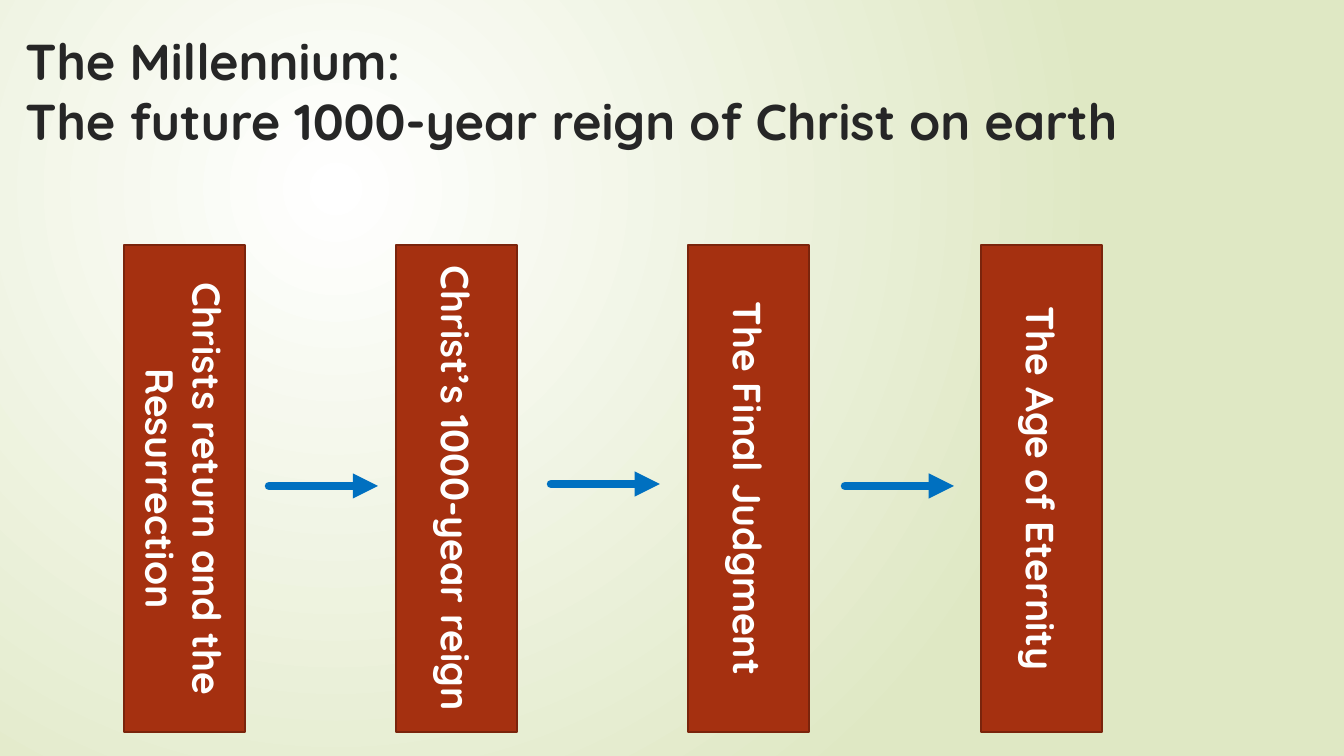
"""Build the slide showing the four stages of the Millennium in order."""
from lxml import etree
from pptx import Presentation
from pptx.dml.color import RGBColor
from pptx.enum.shapes import MSO_CONNECTOR, MSO_SHAPE
from pptx.enum.text import MSO_ANCHOR, MSO_AUTO_SIZE, PP_ALIGN
from pptx.oxml.ns import qn
from pptx.util import Emu, Pt

TITLE_LINES = ["The Millennium: ", "The future 1000-year reign of Christ on earth"]
STAGES = [
    (124, "Christs return and the Resurrection"),
    (396, "Christ’s 1000-year reign"),
    (688, "The Final Judgment"),
    (981, "The Age of Eternity"),
]
ARROWS = [(269, 486), (551, 484), (845, 486)]

SLIDE_WIDTH, SLIDE_HEIGHT = 1344, 756
TITLE_BOX = (15, 25, 1253, 141)
STAGE_TOP, STAGE_WIDTH, STAGE_HEIGHT = 245, 121, 487
ARROW_LENGTH = 109

FONT = "Quicksand"
WHITE = RGBColor(0xFF, 0xFF, 0xFF)
PALE_GREEN = RGBColor(0xDF, 0xE8, 0xC4)
CHARCOAL = RGBColor(0x26, 0x26, 0x26)
RUST = RGBColor(0xA5, 0x30, 0x10)
DARK_RUST = RGBColor(0x7A, 0x24, 0x0C)
BLUE = RGBColor(0x00, 0x70, 0xC0)

TITLE_ONLY = 5
RECTANGLE = MSO_SHAPE.RECTANGLE
STRAIGHT = MSO_CONNECTOR.STRAIGHT
TOP, MIDDLE = MSO_ANCHOR.TOP, MSO_ANCHOR.MIDDLE
LEFT, CENTER = PP_ALIGN.LEFT, PP_ALIGN.CENTER
NO_AUTOFIT = MSO_AUTO_SIZE.NONE


def px(length):
    """Turn pixels into EMU."""
    return Emu(round(length * 914400 / 100.8))


def write_lines(frame, lines, size, color, align, anchor):
    """Write bold lines into one paragraph, with line breaks between them."""
    frame.word_wrap = True
    frame.auto_size = NO_AUTOFIT
    frame.vertical_anchor = anchor
    para = frame.paragraphs[0]
    para.alignment = align
    for index, line in enumerate(lines):
        if index:
            para.add_line_break()
        span = para.add_run()
        span.text = line
        span.font.name = FONT
        span.font.size = Pt(size)
        span.font.bold = True
        span.font.color.rgb = color


def paint_background(page):
    """Fill the page with a circular gradient."""
    fill = page.background.fill
    fill.gradient()
    for stop, color in zip(fill.gradient_stops, (WHITE, PALE_GREEN)):
        stop.color.rgb = color
    gradient = page.element.find(".//" + qn("a:gradFill"))
    linear = gradient.find(qn("a:lin"))
    circle = etree.Element(qn("a:path"), {"path": "circle"})
    etree.SubElement(circle, qn("a:fillToRect"),
                     {"l": "50000", "t": "50000", "r": "100000", "b": "100000"})
    gradient.replace(linear, circle)


def add_stage(page, left, label):
    """Add a tall box with its label turned downwards."""
    box = page.shapes.add_shape(RECTANGLE, px(left), px(STAGE_TOP),
                                px(STAGE_WIDTH), px(STAGE_HEIGHT))
    box.shadow.inherit = False
    box.fill.solid()
    box.fill.fore_color.rgb = RUST
    box.line.color.rgb = DARK_RUST
    box.line.width = Pt(1.25)
    write_lines(box.text_frame, [label], 28, WHITE, CENTER, MIDDLE)
    box.element.find(".//" + qn("a:bodyPr")).set("vert", "vert")


def add_arrow(page, left, middle):
    """Add a thick arrow pointing right."""
    arrow = page.shapes.add_connector(STRAIGHT, px(left), px(middle),
                                      px(left + ARROW_LENGTH), px(middle))
    arrow.line.color.rgb = BLUE
    arrow.line.width = Pt(6)
    outline = arrow.line._get_or_add_ln()
    outline.set("cap", "rnd")
    etree.SubElement(outline, qn("a:tailEnd"), {"type": "triangle"})
    etree.SubElement(arrow.element.spPr, qn("a:effectLst"))


def main():
    """Build and save the deck."""
    deck = Presentation()
    deck.slide_width, deck.slide_height = px(SLIDE_WIDTH), px(SLIDE_HEIGHT)
    page = deck.slides.add_slide(deck.slide_layouts[TITLE_ONLY])
    paint_background(page)

    title = page.shapes.title
    title.left, title.top, title.width, title.height = map(px, TITLE_BOX)
    write_lines(title.text_frame, TITLE_LINES, 36, CHARCOAL, LEFT, TOP)

    for left, label in STAGES:
        add_stage(page, left, label)
    for left, middle in ARROWS:
        add_arrow(page, left, middle)
    deck.save("out.pptx")


if __name__ == "__main__":
    main()
